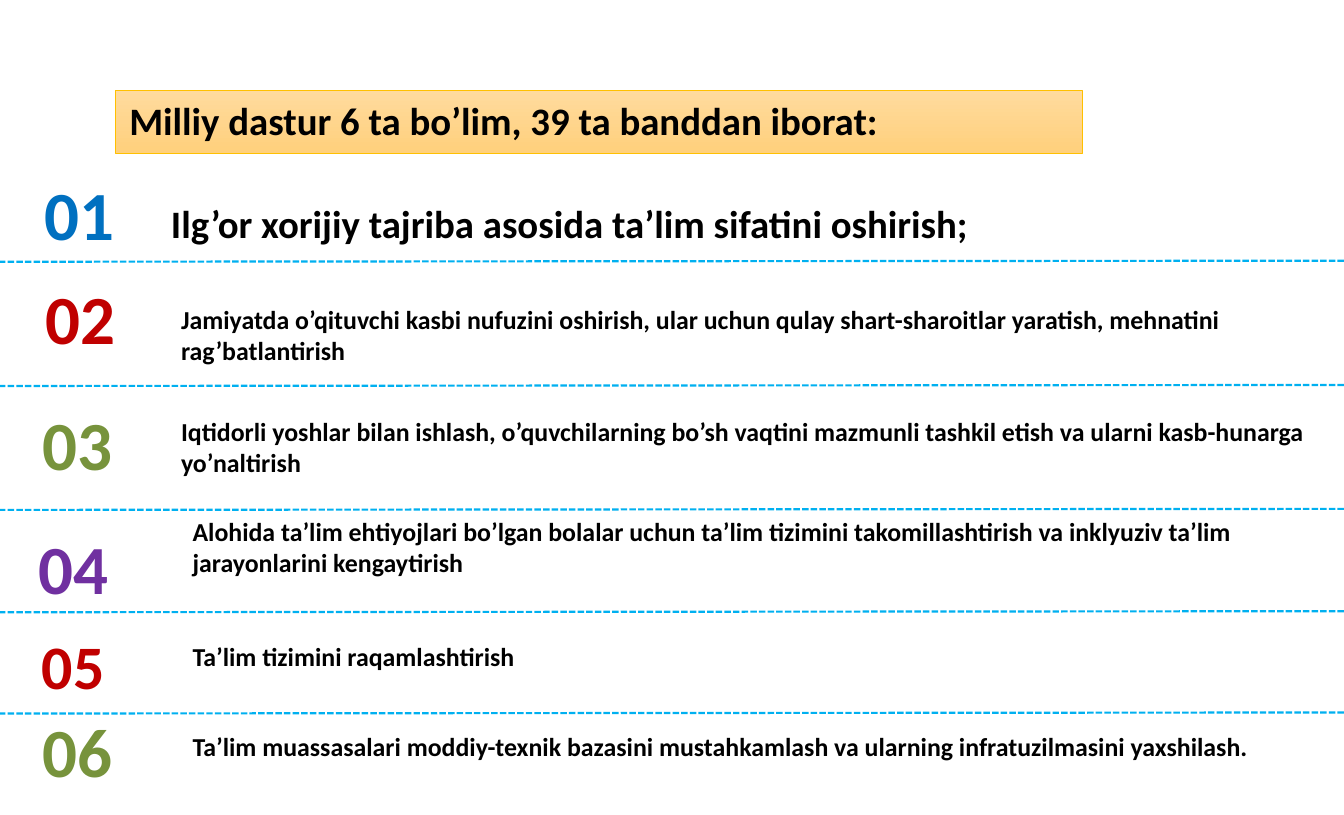
from dataclasses import dataclass

from lxml.etree import SubElement
from pptx import Presentation
from pptx.dml.color import RGBColor
from pptx.enum.dml import MSO_LINE
from pptx.enum.shapes import MSO_CONNECTOR, MSO_SHAPE
from pptx.enum.text import MSO_ANCHOR, PP_ALIGN
from pptx.oxml.ns import qn
from pptx.util import Pt

BLACK = RGBColor(0x00, 0x00, 0x00)
WHITE = RGBColor(0xFF, 0xFF, 0xFF)
BLUE = RGBColor(0x00, 0x70, 0xC0)
STEEL = RGBColor(0x4F, 0x81, 0xBD)
RED = RGBColor(0xC0, 0x00, 0x00)
GREEN = RGBColor(0x77, 0x93, 0x3C)
DARK_GREEN = RGBColor(0x4F, 0x62, 0x28)
PURPLE = RGBColor(0x70, 0x30, 0xA0)
SKY = RGBColor(0x00, 0xB0, 0xF0)
GOLD = RGBColor(0xFF, 0xC0, 0x00)
PALE_ORANGE = RGBColor(0xFF, 0xDB, 0x9E)
ORANGE = RGBColor(0xFF, 0xD0, 0x7C)

PAGE_WIDTH = 935.28
PAGE_HEIGHT = 567.36
NUMBER_WIDTH = 94
ROW_TOPS = (109, 181.5, 268, 354.25, 425.5, 496)


@dataclass
class Section:
    text: str
    color: RGBColor
    outline: RGBColor
    outline_width: float
    number_center: float
    number_offset: float
    text_left: float
    text_offset: float
    text_height: float
    number_size: int = 48
    text_size: int = 18
    filled: bool = False


SECTIONS = (
    Section("Ilg’or xorijiy tajriba asosida ta’lim sifatini oshirish;",
            BLUE, STEEL, 1, 55.5, 7, 109.5, 25, 44, text_size=27),
    Section("Jamiyatda o’qituvchi kasbi nufuzini oshirish, ular uchun qulay "
            "shart-sharoitlar yaratish, mehnatini rag’batlantirish",
            RED, WHITE, 1.06, 56, 7, 116.5, 24.5, 53.25, filled=True),
    Section("Iqtidorli yoshlar bilan ishlash, o’quvchilarning bo’sh vaqtini "
            "mazmunli tashkil etish va ularni kasb-hunarga yo’naltirish",
            GREEN, WHITE, 0.75, 54, 7.75, 116.5, 16.5, 53.25, filled=True),
    Section("Alohida ta’lim ehtiyojlari bo’lgan bolalar uchun ta’lim tizimini "
            "takomillashtirish va inklyuziv ta’lim jarayonlarini kengaytirish",
            PURPLE, DARK_GREEN, 1, 51, 8, 124.5, 0, 53.25),
    Section("Ta’lim tizimini raqamlashtirish",
            RED, WHITE, 1.06, 51, 8, 124.5, 16, 31.5, number_size=43),
    Section("Ta’lim muassasalari moddiy-texnik bazasini mustahkamlash va "
            "ularning infratuzilmasini yaxshilash.",
            GREEN, WHITE, 0.75, 54, -6.5, 124.5, 8, 31.5),
)


def write(box, text, size, color=BLACK, align=PP_ALIGN.LEFT, insets=(9.5, 4.75)):
    frame = box.text_frame
    frame.word_wrap = True
    frame.margin_left = frame.margin_right = Pt(insets[0])
    frame.margin_top = frame.margin_bottom = Pt(insets[1])
    frame.text = text
    para = frame.paragraphs[0]
    para.alignment = align
    span = para.runs[0]
    span.font.name = "Calibri"
    span.font.size = Pt(size)
    span.font.bold = True
    span.font.color.rgb = color
    return span


def outline_span(span, color, width):
    properties = span.font._element
    line = SubElement(properties, qn("a:ln"), w=str(int(Pt(width))))
    fill = SubElement(line, qn("a:solidFill"))
    SubElement(fill, qn("a:srgbClr"), val=str(color))
    properties.insert(0, line)


def add_heading(page, left, top, width, height):
    box = page.shapes.add_shape(
        MSO_SHAPE.RECTANGLE, Pt(left), Pt(top), Pt(width), Pt(height))
    box.shadow.inherit = False
    box.fill.gradient()
    box.fill.gradient_angle = 270
    for stop, color in zip(box.fill.gradient_stops, (PALE_ORANGE, ORANGE)):
        stop.color.rgb = color
    box.line.color.rgb = GOLD
    box.line.width = Pt(0.5)
    write(box, "Milliy dastur 6 ta bo’lim, 39 ta banddan iborat:", 27)
    box.text_frame.vertical_anchor = MSO_ANCHOR.TOP


def add_divider(page, top):
    divider = page.shapes.add_connector(
        MSO_CONNECTOR.STRAIGHT, Pt(PAGE_WIDTH), Pt(top), Pt(0), Pt(top + 0.72))
    divider.line.color.rgb = SKY
    divider.line.width = Pt(1.5)
    divider.line.dash_style = MSO_LINE.SQUARE_DOT
    SubElement(divider._element.spPr, qn("a:effectLst"))


def add_section(page, number, section, top):
    text_area = (Pt(section.text_left), Pt(top + section.text_offset),
                 Pt(PAGE_WIDTH - section.text_left), Pt(section.text_height))
    if section.filled:
        box = page.shapes.add_shape(MSO_SHAPE.RECTANGLE, *text_area)
        box.shadow.inherit = False
        box.fill.solid()
        box.fill.fore_color.rgb = WHITE
        box.line.fill.background()
        box.text_frame.vertical_anchor = MSO_ANCHOR.MIDDLE
    else:
        box = page.shapes.add_textbox(*text_area)
    write(box, section.text, section.text_size)

    label = page.shapes.add_textbox(
        Pt(section.number_center - NUMBER_WIDTH / 2),
        Pt(top + section.number_offset),
        Pt(NUMBER_WIDTH), Pt(section.number_size * 1.22 + 7))
    span = write(label, f"{number:02}", section.number_size, section.color,
                 PP_ALIGN.CENTER, (7.2, 3.6))
    outline_span(span, section.outline, section.outline_width)


def main():
    deck = Presentation()
    deck.slide_width = Pt(PAGE_WIDTH)
    deck.slide_height = Pt(PAGE_HEIGHT)
    page = deck.slides.add_slide(deck.slide_layouts[6])
    add_heading(page, 80.5, 62.75, 672.5, 44)
    for number, (section, top) in enumerate(zip(SECTIONS, ROW_TOPS), start=1):
        add_section(page, number, section, top)
    for top in ROW_TOPS[1:]:
        add_divider(page, top)
    deck.save("out.pptx")


if __name__ == "__main__":
    main()
